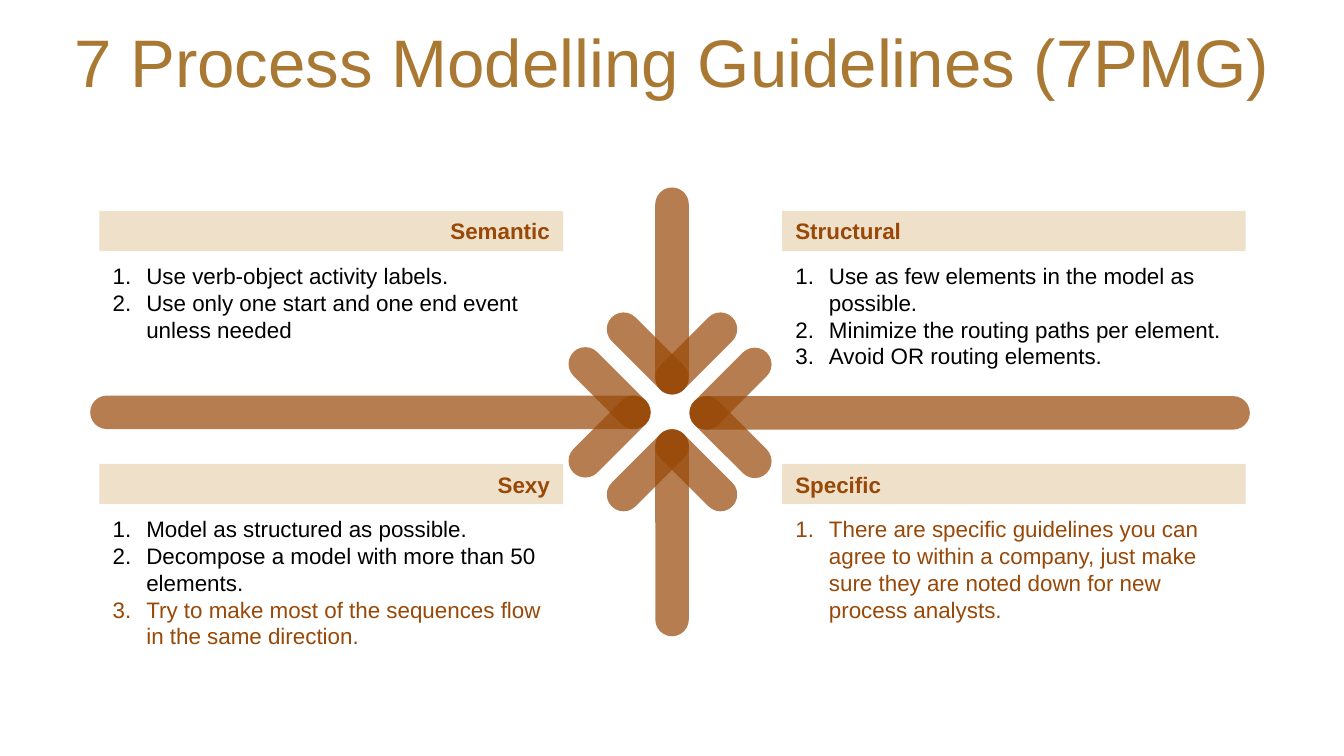
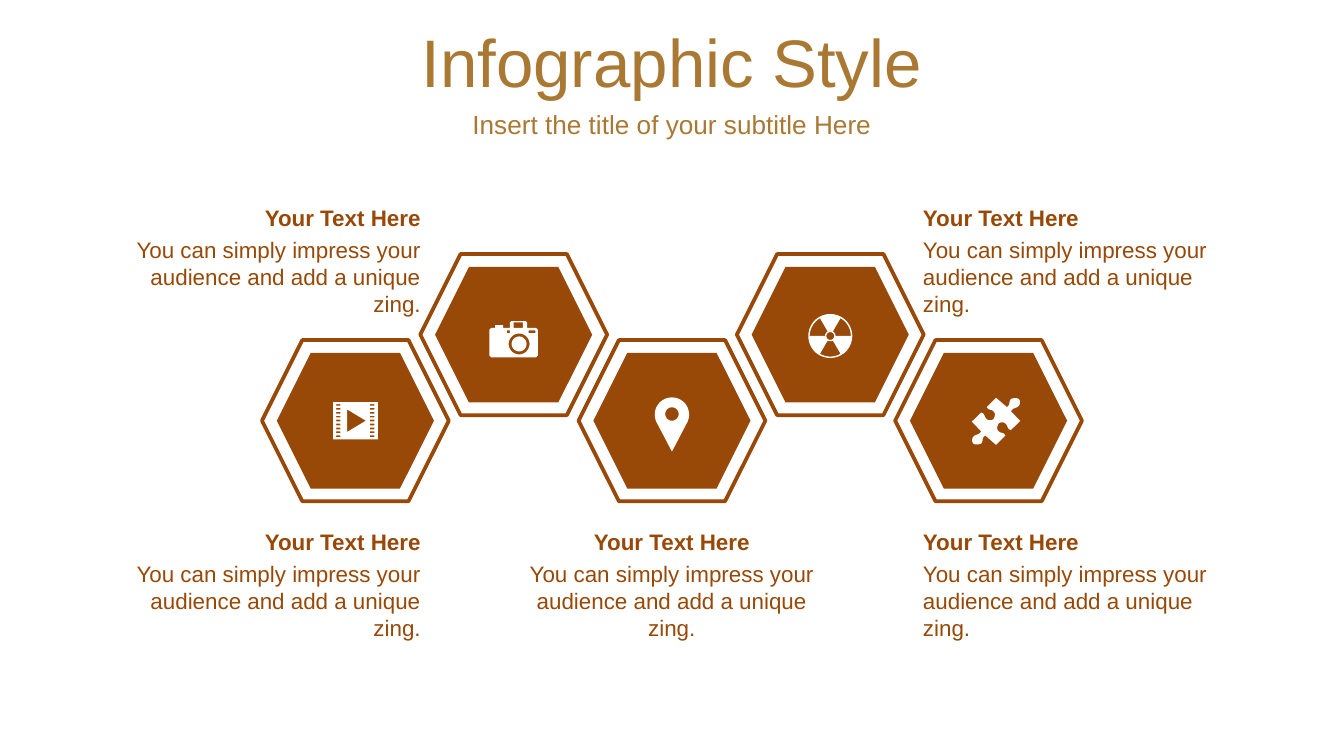
from math import cos, radians, sin

from lxml import etree
from pptx import Presentation
from pptx.dml.color import RGBColor
from pptx.enum.shapes import MSO_SHAPE
from pptx.enum.text import MSO_ANCHOR, PP_ALIGN
from pptx.oxml.ns import qn
from pptx.util import Pt

LEFT, CENTER, RIGHT = PP_ALIGN.LEFT, PP_ALIGN.CENTER, PP_ALIGN.RIGHT
TOP, MIDDLE = MSO_ANCHOR.TOP, MSO_ANCHOR.MIDDLE
RECTANGLE, PILL, HEXAGON = MSO_SHAPE.RECTANGLE, MSO_SHAPE.ROUNDED_RECTANGLE, MSO_SHAPE.HEXAGON

COLORS = {"gold": "A97933", "rust": "984807", "sand": "EFE0CA", "black": "000000", "white": "FFFFFF"}
FONT = "Arial"
PAGE_WIDTH, PAGE_HEIGHT = 720, 405
BAR_THICKNESS, ARROWHEAD_LENGTH = 18, 54.7
CARD_WIDTH, HEADER_HEIGHT = 248.4, 21.6
CAPTION_WIDTH = 184.3
HEXAGON_PITCH = 84.8


def rgb(name):
    return RGBColor.from_string(COLORS[name])


def style_para(para, size, color, align=LEFT, bold=False):
    para.alignment = align
    for span in para.runs:
        span.font.name = FONT
        span.font.size = Pt(size)
        span.font.bold = bold
        span.font.color.rgb = rgb(color)


def add_text(page, area, text, size, color, align=LEFT, bold=False, anchor=TOP):
    box = page.shapes.add_textbox(*map(Pt, area))
    frame = box.text_frame
    frame.word_wrap = True
    frame.vertical_anchor = anchor
    frame.text = text
    style_para(frame.paragraphs[0], size, color, align, bold)


def add_title(page, title, subtitle=None):
    add_text(page, (0, 10, PAGE_WIDTH, 45.4), title, 36, "gold", CENTER, anchor=MIDDLE)
    if subtitle:
        add_text(page, (0, 55.4, PAGE_WIDTH, 22.3), subtitle, 14, "gold", CENTER, anchor=MIDDLE)


def paint(shape, fill, line=None):
    shape.shadow.inherit = False
    shape.fill.solid()
    shape.fill.fore_color.rgb = rgb(fill)
    if line:
        shape.line.color.rgb = rgb(line)
        shape.line.width = Pt(2)
    else:
        shape.line.fill.background()


def add_filled(page, kind, area, fill, line=None):
    shape = page.shapes.add_shape(kind, *map(Pt, area))
    paint(shape, fill, line)
    return shape


def set_opacity(shape, percent):
    color = shape.fill._xPr.find(qn("a:solidFill"))[0]
    etree.SubElement(color, qn("a:alpha"), val=str(percent * 1000))


def add_arrow(page, tip, angle, length):
    """Three translucent bars that start at tip: the shaft along angle and two barbs beside it."""
    for turn, bar_length in ((0, length), (45, ARROWHEAD_LENGTH), (-45, ARROWHEAD_LENGTH)):
        direction = radians(angle + turn)
        reach = (bar_length - BAR_THICKNESS) / 2
        center_x = tip[0] + reach * cos(direction)
        center_y = tip[1] + reach * sin(direction)
        area = (center_x - bar_length / 2, center_y - BAR_THICKNESS / 2, bar_length, BAR_THICKNESS)
        bar = add_filled(page, PILL, area, "rust")
        bar.adjustments[0] = 0.5
        bar.rotation = (angle + turn) % 360
        set_opacity(bar, 70)


def number_para(para):
    properties = para._p.get_or_add_pPr()
    properties.set("marL", str(Pt(18)))
    properties.set("indent", str(Pt(-18)))
    etree.SubElement(properties, qn("a:buFont"), typeface=FONT)
    etree.SubElement(properties, qn("a:buAutoNum"), type="arabicPeriod")


def add_card(page, left, top, heading, align, guidelines):
    """A heading band above a numbered list of (text, colour) guidelines."""
    header = add_filled(page, RECTANGLE, (left, top, CARD_WIDTH, HEADER_HEIGHT), "sand")
    header.text_frame.text = heading
    style_para(header.text_frame.paragraphs[0], 12, "rust", align, True)

    box = page.shapes.add_textbox(Pt(left), Pt(top + 23.8), Pt(CARD_WIDTH), Pt(80))
    frame = box.text_frame
    frame.word_wrap = True
    frame.text = "\n".join(text for text, _ in guidelines)
    for para, (_, color) in zip(frame.paragraphs, guidelines):
        style_para(para, 12, color)
        number_para(para)


def add_caption(page, left, top, align):
    add_text(page, (left, top + 17.3, CAPTION_WIDTH, 36),
             "You can simply impress your audience and add a unique zing.", 12, "rust", align)
    add_text(page, (left, top, CAPTION_WIDTH, 21.6), "Your Text Here", 12, "rust", align, True)


def rectangle(left, top, width, height):
    return [(left, top), (left + width, top), (left + width, top + height), (left, top + height)]


def arc(x, y, radius, start=0, end=360, steps=36):
    angles = [radians(start + (end - start) * step / steps) for step in range(steps + 1)]
    return [(x + radius * cos(angle), y + radius * sin(angle)) for angle in angles]


def curve(start, first, second, end, steps=6):
    """Points on a cubic curve, both ends included."""
    points = []
    for step in range(steps + 1):
        t = step / steps
        weights = ((1 - t) ** 3, 3 * t * (1 - t) ** 2, 3 * t * t * (1 - t), t ** 3)
        points.append(tuple(
            sum(weight * point[axis] for weight, point in zip(weights, (start, first, second, end)))
            for axis in (0, 1)))
    return points


def film_icon():
    holes = [rectangle(left, -8.9 + 2.1 * row, 2.4, 0.9) for left in (-10.4, 7.8) for row in range(9)]
    play = [(-4.4, -6), (-4.4, 6), (5.6, 0)]
    return [rectangle(-12, -10, 24, 20), play] + holes


def camera_icon():
    body = [(-12, -6.3), (-10, -6.3), (-10, -7.8), (-5.7, -7.8), (-5.7, -6.3), (-2, -6.3),
            (-2, -9.2), (-1.2, -10), (6.4, -10), (7.2, -9.2), (7.2, -6.3), (12, -6.3),
            (13, -5.3), (13, 8.5), (12, 9.5), (-12, 9.5), (-13, 8.5), (-13, -5.3)]
    cutouts = [rectangle(0, -9.2, 5, 2.9), rectangle(-3.6, -4.9, 1.5, 1.4), rectangle(8, -4.9, 3.6, 1.4)]
    return [body, *cutouts, arc(2.9, 2.3, 5.6), arc(2.9, 2.3, 4)]


def pin_icon():
    return [arc(0, -3.3, 9.2, 150, 390) + [(0, 16.5)], arc(0, -3.6, 3.6)]


def radiation_icon():
    blades = [arc(0, 0, 11, start, start + 60) + arc(0, 0, 2.8, start + 60, start)
              for start in (60, 180, 300)]
    return [arc(0, 0, 11.8), arc(0, 0, 2.1)] + blades


def puzzle_icon():
    """One half has a knob and a notch; the other half is the same, turned around the centre."""
    knob = [(5.8, -7.6), (7.9, -9), (6.5, -9.7), (7.9, -11.9), (9.4, -12.6), (11.5, -12.6),
            (12.2, -11.9), (13, -11.2), (13, -9), (12.2, -8.3), (10.8, -6.8), (9.4, -7.6), (7.9, -5.4)]
    notch = [(7.9, 4.7), (5.8, 4), (6.5, 2.5), (5, 1.1), (4.3, 0.4), (2.2, 0.4),
             (1.4, 1.1), (0.7, 2.5), (0, 4), (1.4, 5.4), (2.9, 6.8), (3.6, 5.4), (5, 7.6)]
    half = [(0, -12.6)]
    for controls, corner in ((knob, (13, -0.2)), (notch, (0, 12.6))):
        for index in range(0, 12, 3):
            half += curve(*controls[index:index + 4])
        half.append(corner)
    return [half + [(-x, -y) for x, y in half]]


def add_icon(page, x, y, contours):
    """One white outline; contours inside another one are holes."""
    placed = [[(Pt(x + dx), Pt(y + dy)) for dx, dy in contour] for contour in contours]
    builder = page.shapes.build_freeform(*placed[0][0])
    builder.add_line_segments(placed[0][1:], close=True)
    for contour in placed[1:]:
        builder.move_to(*contour[0])
        builder.add_line_segments(contour[1:], close=True)
    paint(builder.convert_to_shape(), "white")


def add_hexagon(page, x, y):
    for width, height, fill, line in ((100.1, 86.4, "white", "rust"), (84.2, 72.7, "rust", None)):
        add_filled(page, HEXAGON, (x - width / 2, y - height / 2, width, height), fill, line)


def build_guidelines(page):
    add_title(page, "7 Process Modelling Guidelines (7PMG)")
    for tip, angle, length in (
        ((339.5, 220.9), 180, 300.2),
        ((378.4, 221.2), 0, 300.2),
        ((360, 239), 90, 110.9),
        ((360, 202.3), 270, 110.9),
    ):
        add_arrow(page, tip, angle, length)

    left, right, upper, lower = 53.3, 419, 113, 248.6
    add_card(page, left, upper, "Semantic", RIGHT, [
        ("Use verb-object activity labels.", "black"),
        ("Use only one start and one end event unless needed", "black")])
    add_card(page, right, upper, "Structural", LEFT, [
        ("Use as few elements in the model as possible.", "black"),
        ("Minimize the routing paths per element.", "black"),
        ("Avoid OR routing elements.", "black")])
    add_card(page, left, lower, "Sexy", RIGHT, [
        ("Model as structured as possible.", "black"),
        ("Decompose a model with more than 50 elements.", "black"),
        ("Try to make most of the sequences flow in the same direction.", "rust")])
    add_card(page, right, lower, "Specific", LEFT, [
        ("There are specific guidelines you can agree to within a company, just make sure "
         "they are noted down for new process analysts.", "rust")])


def build_infographic(page):
    add_title(page, "Infographic Style", "Insert the title of your subtitle Here")
    icons = [(film_icon, 0, 0), (camera_icon, 0, 2.7), (pin_icon, 0, 0),
             (radiation_icon, 0, 0.7), (puzzle_icon, 4, 0.3)]
    centers = [(PAGE_WIDTH / 2 + (index - 2) * HEXAGON_PITCH, 179.3 if index % 2 else 225.4)
               for index in range(len(icons))]
    for x, y in centers:
        add_hexagon(page, x, y)
    for (x, y), (icon, shift_x, shift_y) in zip(centers, icons):
        add_icon(page, x + shift_x, y + shift_y, icon())

    left, middle, right, upper, lower = 48.2, 267.8, 487.4, 105.8, 279.4
    for x, y, align in ((left, lower, RIGHT), (right, lower, LEFT), (middle, lower, CENTER),
                        (left, upper, RIGHT), (right, upper, LEFT)):
        add_caption(page, x, y, align)


def main():
    deck = Presentation()
    deck.slide_width, deck.slide_height = Pt(PAGE_WIDTH), Pt(PAGE_HEIGHT)
    for build in (build_guidelines, build_infographic):
        build(deck.slides.add_slide(deck.slide_layouts[6]))
    deck.save("out.pptx")


if __name__ == "__main__":
    main()
